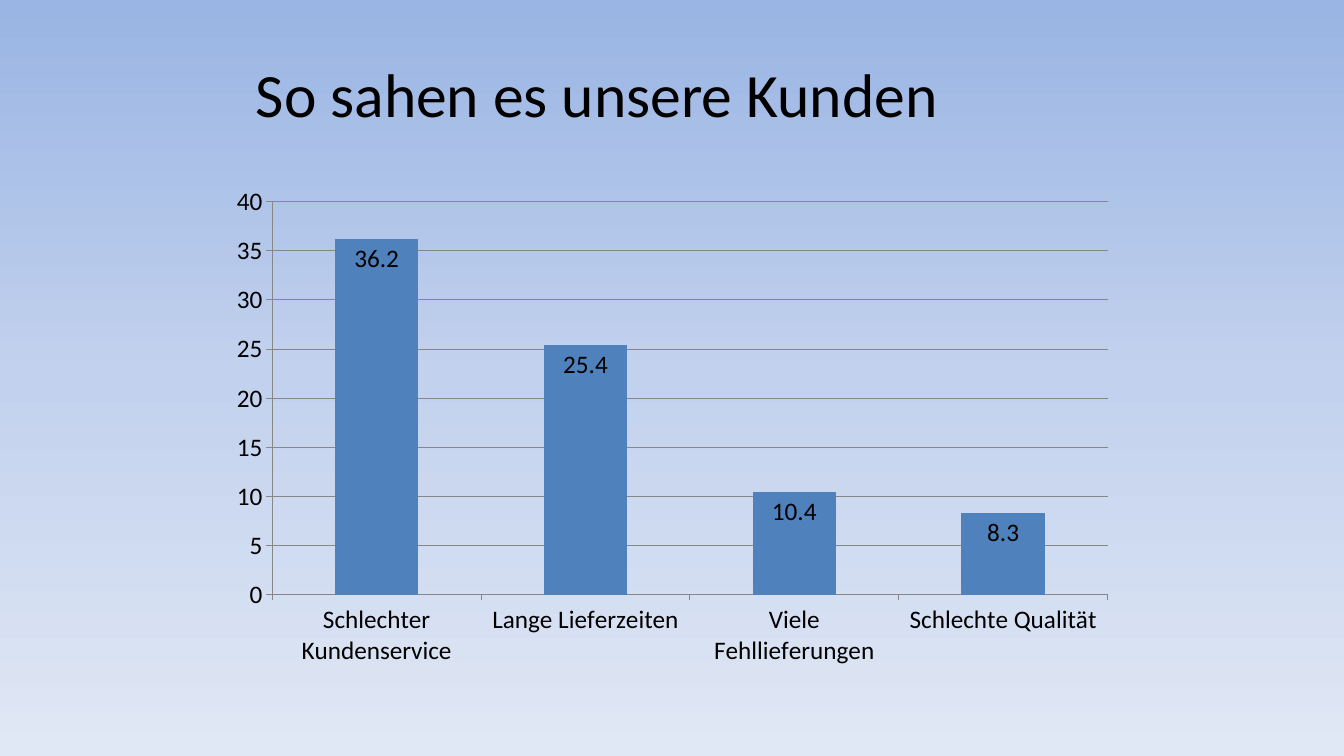
from copy import deepcopy
from typing import Any, NamedTuple

from pptx import Presentation
from pptx.chart.data import CategoryChartData
from pptx.dml.color import RGBColor
from pptx.enum.chart import XL_CHART_TYPE, XL_LABEL_POSITION, XL_TICK_MARK
from pptx.enum.text import MSO_ANCHOR, PP_ALIGN
from pptx.oxml.ns import qn
from pptx.util import Cm, Pt

COLUMNS = XL_CHART_TYPE.COLUMN_CLUSTERED
INSIDE_END = XL_LABEL_POSITION.INSIDE_END
TICK_OUTSIDE = XL_TICK_MARK.OUTSIDE
TICK_NONE = XL_TICK_MARK.NONE
MIDDLE = MSO_ANCHOR.MIDDLE
CENTER = PP_ALIGN.CENTER

FONT_NAME = "Calibri"
TEXT_COLOR = "000000"
BAR_COLOR = "4F81BD"
AXIS_COLOR = "878787"


class Complaint(NamedTuple):
    reason: str
    share: float


class GradientPoint(NamedTuple):
    position: float
    color: str


class Frame(NamedTuple):
    left: float
    top: float
    width: float
    height: float

    def lengths(self) -> list[Cm]:
        return [Cm(value) for value in self]


COMPLAINTS = [
    Complaint("Schlechter Kundenservice", 36.2),
    Complaint("Lange Lieferzeiten", 25.4),
    Complaint("Viele Fehllieferungen", 10.4),
    Complaint("Schlechte Qualität", 8.3),
]
SKY = [
    GradientPoint(0, "9AB5E4"),
    GradientPoint(0.5, "C2D1ED"),
    GradientPoint(1, "E1E8F5"),
]
TITLE_FRAME = Frame(1.7, 0.76, 26.7, 3.18)
CHART_FRAME = Frame(5.51, 4.45, 22.86, 12.57)


def rgb(color: str) -> RGBColor:
    return RGBColor.from_string(color)


def apply_format(target: Any, values: dict[str, Any]) -> None:
    for name, value in values.items():
        setattr(target, name, value)


def format_font(font: Any, size: float) -> None:
    apply_format(font, {"name": FONT_NAME, "size": Pt(size), "bold": False})
    font.color.rgb = rgb(TEXT_COLOR)


def paint_background(page: Any, points: list[GradientPoint]) -> None:
    fill = page.background.fill
    fill.gradient()
    fill.gradient_angle = 270
    stop_list = page.element.find(f".//{qn('a:gsLst')}")
    while len(stop_list) < len(points):
        stop_list.append(deepcopy(stop_list[-1]))
    for stop, point in zip(fill.gradient_stops, points):
        stop.position = point.position
        stop.color.rgb = rgb(point.color)


def add_title(page: Any, text: str, frame: Frame) -> None:
    box = page.shapes.add_textbox(*frame.lengths())
    apply_format(box.text_frame, {"word_wrap": True, "vertical_anchor": MIDDLE})
    para = box.text_frame.paragraphs[0]
    para.alignment = CENTER
    span = para.add_run()
    span.text = text
    format_font(span.font, 44)


def format_axis(axis: Any, gridlines: bool) -> None:
    apply_format(axis, {
        "has_major_gridlines": gridlines,
        "major_tick_mark": TICK_OUTSIDE,
        "minor_tick_mark": TICK_NONE,
    })
    lines = [axis.format.line]
    if gridlines:
        lines.append(axis.major_gridlines.format.line)
    for line in lines:
        line.color.rgb = rgb(AXIS_COLOR)
        line.width = Pt(0.75)


def add_complaint_chart(page: Any, complaints: list[Complaint], frame: Frame) -> None:
    data = CategoryChartData()
    data.categories = [complaint.reason for complaint in complaints]
    data.add_series("Series 1", [complaint.share for complaint in complaints])
    chart = page.shapes.add_chart(COLUMNS, *frame.lengths(), data).chart
    apply_format(chart, {"has_legend": False, "has_title": False})
    format_font(chart.font, 18)

    format_axis(chart.category_axis, gridlines=False)
    format_axis(chart.value_axis, gridlines=True)
    apply_format(chart.value_axis, {
        "minimum_scale": 0, "maximum_scale": 40, "major_unit": 5,
    })

    plot = chart.plots[0]
    apply_format(plot, {"gap_width": 150, "vary_by_categories": False})
    series = plot.series[0]
    series.format.fill.solid()
    series.format.fill.fore_color.rgb = rgb(BAR_COLOR)
    labels = series.data_labels
    apply_format(labels, {"show_value": True, "position": INSIDE_END})
    format_font(labels.font, 18)


def main() -> None:
    deck = Presentation()
    apply_format(deck, {"slide_width": Cm(33.87), "slide_height": Cm(19.05)})
    page = deck.slides.add_slide(deck.slide_layouts[6])
    paint_background(page, SKY)
    add_title(page, "So sahen es unsere Kunden", TITLE_FRAME)
    add_complaint_chart(page, COMPLAINTS, CHART_FRAME)
    deck.save("out.pptx")


if __name__ == "__main__":
    main()
